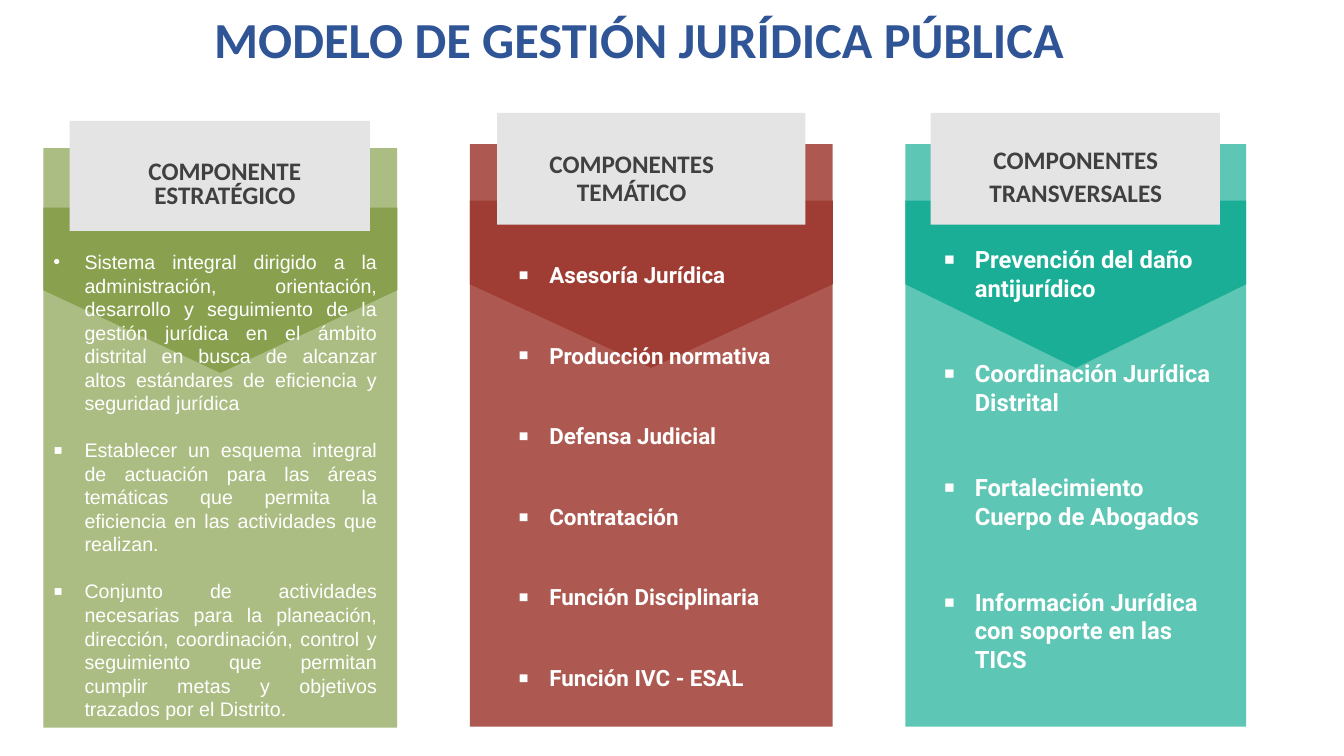
from lxml import etree
from pptx import Presentation
from pptx.dml.color import RGBColor
from pptx.enum.shapes import MSO_SHAPE
from pptx.enum.text import PP_ALIGN
from pptx.oxml.ns import qn
from pptx.util import Inches, Pt

RECT, PENTAGON = MSO_SHAPE.RECTANGLE, MSO_SHAPE.PENTAGON
LEFT, CENTER, JUSTIFY = PP_ALIGN.LEFT, PP_ALIGN.CENTER, PP_ALIGN.JUSTIFY
HANGING = Inches(0.31)

deck = Presentation()
deck.slide_width, deck.slide_height = Inches(13.33), Inches(7.5)
slide = deck.slides.add_slide(deck.slide_layouts[6])


def add_block(kind, box, color, opacity=100):
    block = slide.shapes.add_shape(kind, *map(Inches, box))
    block.shadow.inherit = False
    block.fill.solid()
    block.fill.fore_color.rgb = RGBColor.from_string(color)
    block.line.fill.background()
    if opacity < 100:
        tint = block.fill._xPr.find(".//" + qn("a:srgbClr"))
        etree.SubElement(tint, qn("a:alpha"), val=str(opacity * 1000))
    return block


def add_text(box, lines, font, size, color, bold, align, spacing, inset=0.05):
    frame = slide.shapes.add_textbox(*map(Inches, box)).text_frame
    frame.word_wrap = True
    frame.margin_top = frame.margin_bottom = Inches(inset)
    frame.margin_left = frame.margin_right = Inches(0.1)
    for i, line in enumerate(lines):
        paragraph = frame.paragraphs[0] if i == 0 else frame.add_paragraph()
        paragraph.text = line
        paragraph.alignment = align
        paragraph.line_spacing = spacing
        paragraph.font.name, paragraph.font.size = font, Pt(size)
        paragraph.font.bold = bold
        paragraph.font.color.rgb = RGBColor.from_string(color)
    return frame.paragraphs


# Column panels: panel, downward arrow (left, top, width, height), header plate
columns = [
    ("89A14F", 70, (0.43, 1.47, 3.51, 5.75), (2.06, 1.64), (0.69, 1.2, 2.98, 1.09)),
    ("9F3D34", 85, (4.66, 1.43, 3.6, 5.78), (1.99, 1.66), (4.93, 1.12, 3.06, 1.11)),
    ("1BAE96", 70, (8.98, 1.43, 3.38, 5.78), (1.99, 1.66), (9.23, 1.12, 2.87, 1.11)),
]
for color, opacity, panel, (arrow_top, arrow_length), plate in columns:
    add_block(RECT, panel, color, opacity)
    left, width = panel[0], panel[2]
    # Turned a quarter, so its length runs down and its height spans the panel
    arrow_box = (left + (width - arrow_length) / 2,
                 arrow_top + (arrow_length - width) / 2, arrow_length, width)
    add_block(PENTAGON, arrow_box, color).rotation = 90
    add_block(RECT, plate, "E4E4E4")

# Column headings
headings = [
    ((1.22, 1.5, 2.02, 0.74), ["COMPONENTE", "ESTRATÉGICO"], 0.8),
    ((5.27, 1.41, 1.99, 0.6), ["COMPONENTES TEMÁTICO"], 0.9),
    ((9.4, 1.3, 2.54, 0.7), ["COMPONENTES TRANSVERSALES"], 1.1),
]
for box, lines, spacing in headings:
    add_text(box, lines, "Calibri", 18, "404040", True, CENTER, spacing, 0.1)

# Bulleted contents: gap is counted in lines between items
strategy = [
    "Sistema integral dirigido a la administración, orientación, desarrollo y "
    "seguimiento de la gestión jurídica en el ámbito distrital en busca de "
    "alcanzar altos estándares de eficiencia y seguridad jurídica",
    "Establecer un esquema integral de actuación para las áreas temáticas que "
    "permita la eficiencia en las actividades que realizan.",
    "Conjunto de actividades necesarias para la planeación, dirección, "
    "coordinación, control y seguimiento que permitan cumplir metas y objetivos "
    "trazados por el Distrito.",
]
themes = ["Asesoría Jurídica", "Producción normativa", "Defensa Judicial",
          "Contratación", "Función Disciplinaria", "Función IVC - ESAL"]
transversals = ["Prevención del daño antijurídico", "Coordinación Jurídica Distrital",
                "Fortalecimiento Cuerpo de Abogados",
                "Información Jurídica con soporte en las TICS"]
contents = [
    ((0.43, 2.43, 3.41, 5.22), strategy, "Arial", 14, False, JUSTIFY, 1, "•▪▪"),
    ((5.04, 2.54, 3.06, 4.41), themes, "Roboto", 16, True, LEFT, 2, "▪" * 6),
    ((9.26, 2.38, 2.87, 4.39), transversals, "Roboto", 17, True, LEFT, 2, "▪" * 4),
]
for box, items, font, size, bold, align, gap, bullets in contents:
    pitch = Pt(size * 1.2)
    paragraphs = add_text(box, items, font, size, "FFFFFF", bold, align, pitch)
    for i, (paragraph, bullet) in enumerate(zip(paragraphs, bullets)):
        if i > 0:
            paragraph.space_before = Pt(size * 1.2 * gap)
        props = paragraph._p.get_or_add_pPr()
        props.set("marL", str(HANGING))
        props.set("indent", str(-HANGING))
        marks = []
        if bullet == "▪":
            bullet_color = etree.Element(qn("a:buClr"))
            etree.SubElement(bullet_color, qn("a:srgbClr"), val="FFFFFF")
            marks = [bullet_color, etree.Element(qn("a:buSzPct"), val="140000")]
        marks.append(etree.Element(qn("a:buFont"), typeface="Arial"))
        marks.append(etree.Element(qn("a:buChar"), char=bullet))
        for mark in marks:
            props.find(qn("a:defRPr")).addprevious(mark)

# Title
add_text((1.46, 0.28, 9.76, 0.5), ["MODELO DE GESTIÓN JURÍDICA PÚBLICA"],
         "Calibri", 36, "2F5597", True, CENTER, Pt(25))

deck.save("out.pptx")
